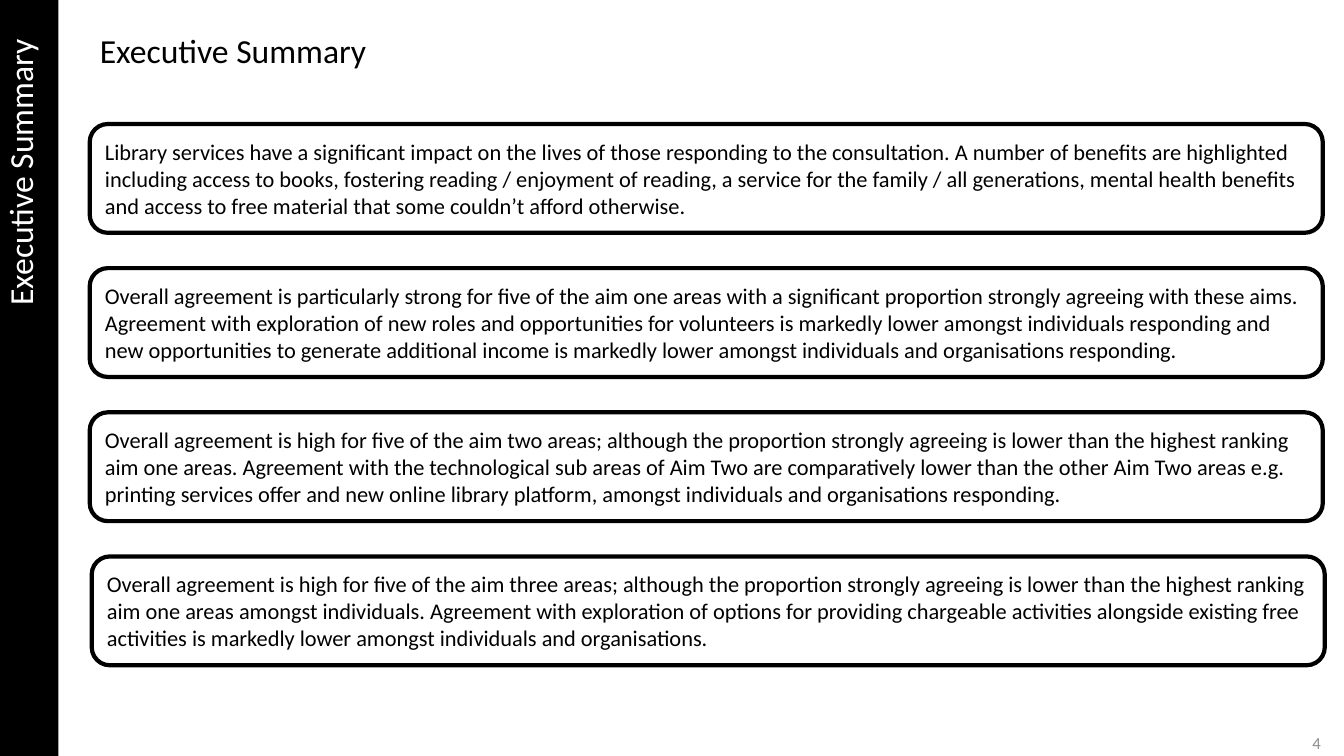
from pptx import Presentation
from pptx.dml.color import RGBColor
from pptx.enum.shapes import MSO_SHAPE
from pptx.enum.text import MSO_ANCHOR, MSO_AUTO_SIZE, PP_ALIGN
from pptx.util import Inches, Pt

TITLE = "Executive Summary"
POINTS = [
    "Library services have a significant impact on the lives of those responding to the "
    "consultation. A number of benefits are highlighted including access to books, fostering "
    "reading / enjoyment of reading, a service for the family / all generations, mental health "
    "benefits and access to free material that some couldn’t afford otherwise.",
    "Overall agreement is particularly strong for five of the aim one areas with a significant "
    "proportion strongly agreeing with these aims. Agreement with exploration of new roles and "
    "opportunities for volunteers is markedly lower amongst individuals responding and new "
    "opportunities to generate additional income is markedly lower amongst individuals and "
    "organisations responding.",
    "Overall agreement is high for five of the aim two areas; although the proportion strongly "
    "agreeing is lower than the highest ranking aim one areas. Agreement with the technological "
    "sub areas of Aim Two are comparatively lower than the other Aim Two areas e.g. printing "
    "services offer and new online library platform, amongst individuals and organisations "
    "responding.",
    "Overall agreement is high for five of the aim three areas; although the proportion strongly "
    "agreeing is lower than the highest ranking aim one areas amongst individuals. Agreement with "
    "exploration of options for providing chargeable activities alongside existing free "
    "activities is markedly lower amongst individuals and organisations.",
]


def color(code):
    """Turn a hex string into a colour."""
    return RGBColor.from_string(code)


def write(shape, text, size, code="000000", align=PP_ALIGN.LEFT):
    """Put one formatted run in a shape and return its paragraph."""
    frame = shape.text_frame
    frame.word_wrap = True
    frame.auto_size = MSO_AUTO_SIZE.NONE
    frame.vertical_anchor = MSO_ANCHOR.MIDDLE
    para = frame.paragraphs[0]
    para.alignment = align
    run = para.add_run()
    run.text = text
    run.font.name = "Calibri"
    run.font.size = Pt(size)
    run.font.color.rgb = color(code)
    return para


def head(slide, text):
    """Move and fill the title placeholder."""
    title = slide.shapes.title
    title.left, title.top = Inches(0.89), Inches(0.25)
    title.width, title.height = Inches(10.8), Inches(0.5)
    write(title, text, 24)


def band(slide, text):
    """Draw the black side band with upward text."""
    bar = slide.shapes.add_shape(
        MSO_SHAPE.RECTANGLE, Inches(-0.03), 0, Inches(0.61), Inches(7.5))
    bar.shadow.inherit = False
    bar.fill.solid()
    bar.fill.fore_color.rgb = color("000000")
    bar.line.fill.background()
    write(bar, text, 24, "FFFFFF", PP_ALIGN.RIGHT).line_spacing = 0.9
    frame = bar.text_frame
    frame.margin_left, frame.margin_top = Inches(0.1), Inches(0.39)
    frame.margin_right, frame.margin_bottom = Inches(0.16), 0
    bar.element.txBody.bodyPr.set("vert", "vert270")


def box(slide, left, top, text):
    """Draw one outlined summary box."""
    card = slide.shapes.add_shape(
        MSO_SHAPE.ROUNDED_RECTANGLE, Inches(left), Inches(top), Inches(12.23), Inches(1.08))
    card.shadow.inherit = False
    card.fill.background()
    card.line.color.rgb = color("000000")
    card.line.width = Pt(3)
    write(card, text, 16).space_before = Pt(6)


def number(slide, text):
    """Add the page number at the lower right."""
    note = slide.shapes.add_textbox(Inches(10.2), Inches(7.24), Inches(3), Inches(0.26))
    write(note, text, 12, "8C8C8C", PP_ALIGN.RIGHT)


def main():
    """Build and save the slide."""
    deck = Presentation()
    deck.slide_width, deck.slide_height = Inches(13.33), Inches(7.5)
    slide = deck.slides.add_slide(deck.slide_layouts[5])
    band(slide, TITLE)
    head(slide, TITLE)
    lefts = [0.89, 0.89, 0.89, 0.91]
    for row, (left, text) in enumerate(zip(lefts, POINTS)):
        box(slide, left, 1.23 + 1.43 * row, text)
    number(slide, "4")
    deck.save("out.pptx")


if __name__ == "__main__":
    main()
